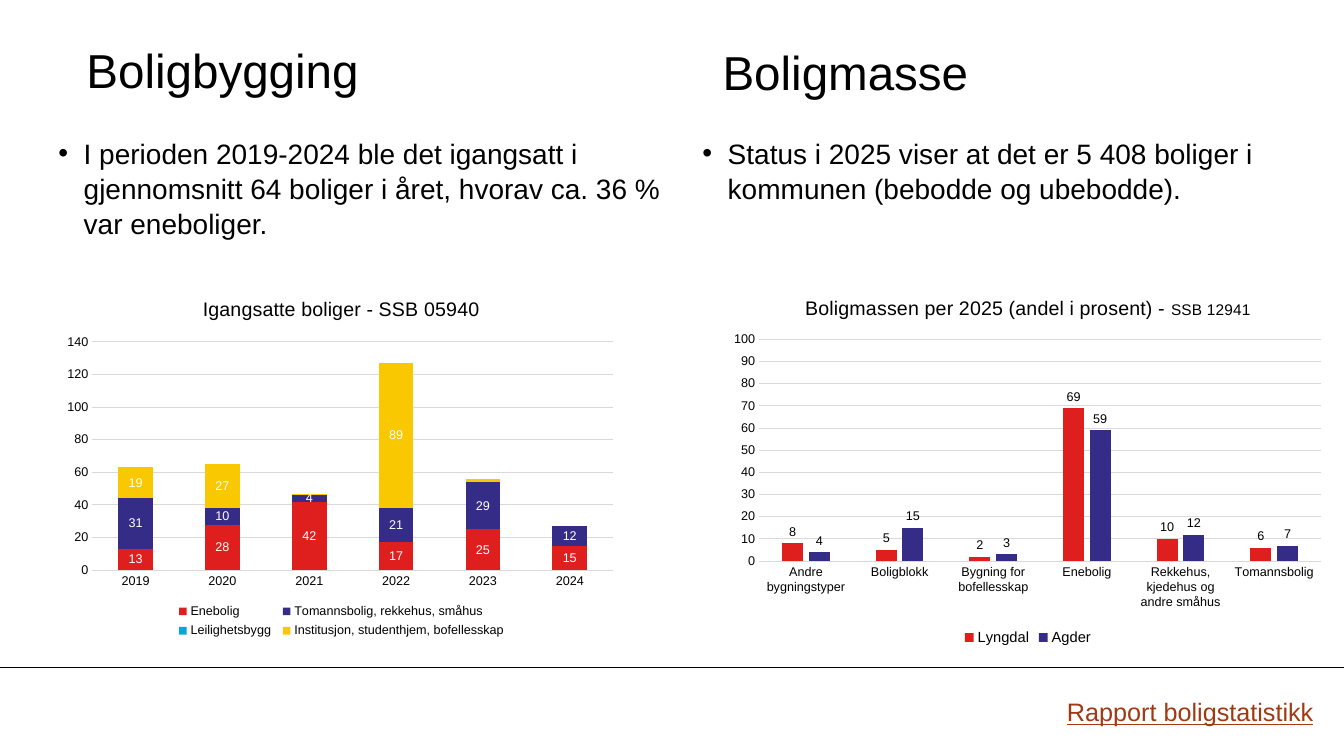
"""Build the slide on housing starts and housing stock."""
from lxml import etree
from pptx import Presentation
from pptx.chart.data import CategoryChartData
from pptx.dml.color import RGBColor
from pptx.enum.chart import XL_CHART_TYPE, XL_LABEL_POSITION, XL_LEGEND_POSITION, XL_TICK_MARK
from pptx.enum.shapes import MSO_CONNECTOR
from pptx.enum.text import MSO_ANCHOR
from pptx.oxml.ns import qn
from pptx.util import Cm, Pt

STACKED = XL_CHART_TYPE.COLUMN_STACKED
CLUSTERED = XL_CHART_TYPE.COLUMN_CLUSTERED
CENTER = XL_LABEL_POSITION.CENTER
OUTSIDE = XL_LABEL_POSITION.OUTSIDE_END
BOTTOM = XL_LEGEND_POSITION.BOTTOM
NONE = XL_TICK_MARK.NONE
STRAIGHT = MSO_CONNECTOR.STRAIGHT
MIDDLE = MSO_ANCHOR.MIDDLE

BLACK = RGBColor(0x00, 0x00, 0x00)
WHITE = RGBColor(0xFF, 0xFF, 0xFF)
GRAY = RGBColor(0xD9, 0xD9, 0xD9)
RUST = RGBColor(0x9F, 0x3A, 0x14)
RED = RGBColor(0xDF, 0x1F, 0x1D)
NAVY = RGBColor(0x34, 0x2C, 0x86)
CYAN = RGBColor(0x00, 0xA9, 0xDA)
GOLD = RGBColor(0xFA, 0xC8, 0x00)


def style(font, size, color=BLACK):
    font.name = "Arial"
    font.size = Pt(size)
    font.bold = False
    font.color.rgb = color


def place(parent, index, area, inner=False):
    for old in parent.findall(qn("c:layout")):
        parent.remove(old)
    layout = etree.Element(qn("c:layout"))
    manual = etree.SubElement(layout, qn("c:manualLayout"))
    parts = [("layoutTarget", "inner")] if inner else []
    parts += [("xMode", "edge"), ("yMode", "edge")] + list(zip("xywh", area))
    for tag, val in parts:
        etree.SubElement(manual, qn("c:" + tag)).set("val", str(val))
    parent.insert(index, layout)


prs = Presentation()
prs.slide_width, prs.slide_height = Cm(33.87), Cm(19.05)
slide = prs.slides.add_slide(prs.slide_layouts[6])
shapes = slide.shapes

rule = shapes.add_connector(STRAIGHT, 0, Cm(16.81), prs.slide_width, Cm(16.81))
rule.line.color.rgb = BLACK
rule.line.width = Pt(0.75)
etree.SubElement(rule._element.spPr, qn("a:effectLst"))

texts = [
    ("Boligbygging", (2.18, 0.81, 9.65, 1.9), 34),
    ("I perioden 2019-2024 ble det igangsatt i gjennomsnitt 64 boliger i året, "
     "hvorav ca. 36 % var eneboliger.", (1.47, 3.4, 15.24, 2.79), 20),
    ("Boligmasse", (18.21, 0.86, 9.65, 1.9), 34),
    ("Status i 2025 viser at det er 5 408 boliger i kommunen (bebodde og ubebodde).",
     (17.7, 3.4, 14.88, 2.13), 20),
]
for words, box, size in texts:
    frame = shapes.add_textbox(*map(Cm, box)).text_frame
    frame.word_wrap = True
    frame.margin_left = frame.margin_right = frame.margin_top = frame.margin_bottom = 0
    frame.text = words
    para = frame.paragraphs[0]
    if size == 34:
        frame.vertical_anchor = MIDDLE
    else:
        props = para._p.get_or_add_pPr()
        props.set("marL", str(Cm(0.64)))
        props.set("indent", str(-Cm(0.64)))
        etree.SubElement(props, qn("a:buFont")).set("typeface", "Arial")
        etree.SubElement(props, qn("a:buChar")).set("char", "•")
        para.line_spacing = 1.04
    style(para.runs[0].font, size)

frame = shapes.add_textbox(Cm(26.64), Cm(17.42), Cm(6.73), Cm(1.02)).text_frame
frame.word_wrap = False
frame.text = "Rapport boligstatistikk"
font = frame.paragraphs[0].runs[0].font
style(font, 18, RUST)
font.underline = True

charts = [
    dict(kind=STACKED, box=(1.47, 7.06, 14.27, 9.14),
         title=[("Igangsatte boliger - SSB 05940", 14)],
         cats=["2019", "2020", "2021", "2022", "2023", "2024"],
         series=[("Enebolig", RED, (13, 28, 42, 17, 25, 15)),
                 ("Tomannsbolig, rekkehus, småhus", NAVY, (31, 10, 4, 21, 29, 12)),
                 ("Leilighetsbygg", CYAN, (0, 0, 0, 0, 0, 0)),
                 ("Institusjon, studenthjem, bofellesskap", GOLD, (19, 27, 1, 89, 2, 0))],
         gap=150, overlap=100, top=140, step=20, legend=9,
         ink=WHITE, spot=CENTER, plot=(0.06, 0.17, 0.92, 0.63)),
    dict(kind=CLUSTERED, box=(18.21, 7.06, 15.39, 9.32),
         title=[("Boligmassen per 2025 (andel i prosent) - ", 14), ("SSB 12941", 11)],
         cats=["Andre bygningstyper", "Boligblokk", "Bygning for bofellesskap",
               "Enebolig", "Rekkehus, kjedehus og andre småhus", "Tomannsbolig"],
         series=[("Lyngdal", RED, (8, 5, 2, 69, 10, 6)),
                 ("Agder", NAVY, (4, 15, 3, 59, 12, 7))],
         gap=219, overlap=-27, top=100, step=10, legend=10.5,
         ink=BLACK, spot=OUTSIDE, plot=(0.06, 0.16, 0.92, 0.6)),
]
for item in charts:
    data = CategoryChartData()
    data.categories = item["cats"]
    for name, color, vals in item["series"]:
        data.add_series(name, vals)
    chart = shapes.add_chart(item["kind"], *map(Cm, item["box"]), data).chart
    style(chart.font, 10)

    para = chart.chart_title.text_frame.paragraphs[0]
    for words, size in item["title"]:
        run = para.add_run()
        run.text = words
        style(run.font, size)

    plot = chart.plots[0]
    plot.vary_by_categories = False
    plot.gap_width, plot.overlap = item["gap"], item["overlap"]
    for series, (name, color, vals) in zip(plot.series, item["series"]):
        series.format.fill.solid()
        series.format.fill.fore_color.rgb = color
        if any(vals):
            labels = series.data_labels
            labels.show_value = True
            labels.position = item["spot"]
            style(labels.font, 9, item["ink"])
            if color == GOLD:
                labels.number_format = '[>2]0;""'
                labels.number_format_is_linked = False

    for axis in (chart.category_axis, chart.value_axis):
        axis.major_tick_mark = axis.minor_tick_mark = NONE
        style(axis.tick_labels.font, 9)
    chart.category_axis.format.line.color.rgb = GRAY
    chart.category_axis.format.line.width = Pt(0.75)
    axis = chart.value_axis
    axis.minimum_scale, axis.maximum_scale = 0, item["top"]
    axis.major_unit = item["step"]
    axis.format.line.fill.background()
    axis.major_gridlines.format.line.color.rgb = GRAY
    axis.major_gridlines.format.line.width = Pt(0.75)

    chart.has_legend = True
    legend = chart.legend
    legend.position = BOTTOM
    legend.include_in_layout = False
    style(legend.font, item["legend"])
    place(chart._chartSpace.chart.plotArea, 0, item["plot"], inner=True)
    if item["kind"] == STACKED:
        place(legend._element, 1, (0.2, 0.88, 0.6, 0.12))

prs.save("out.pptx")
